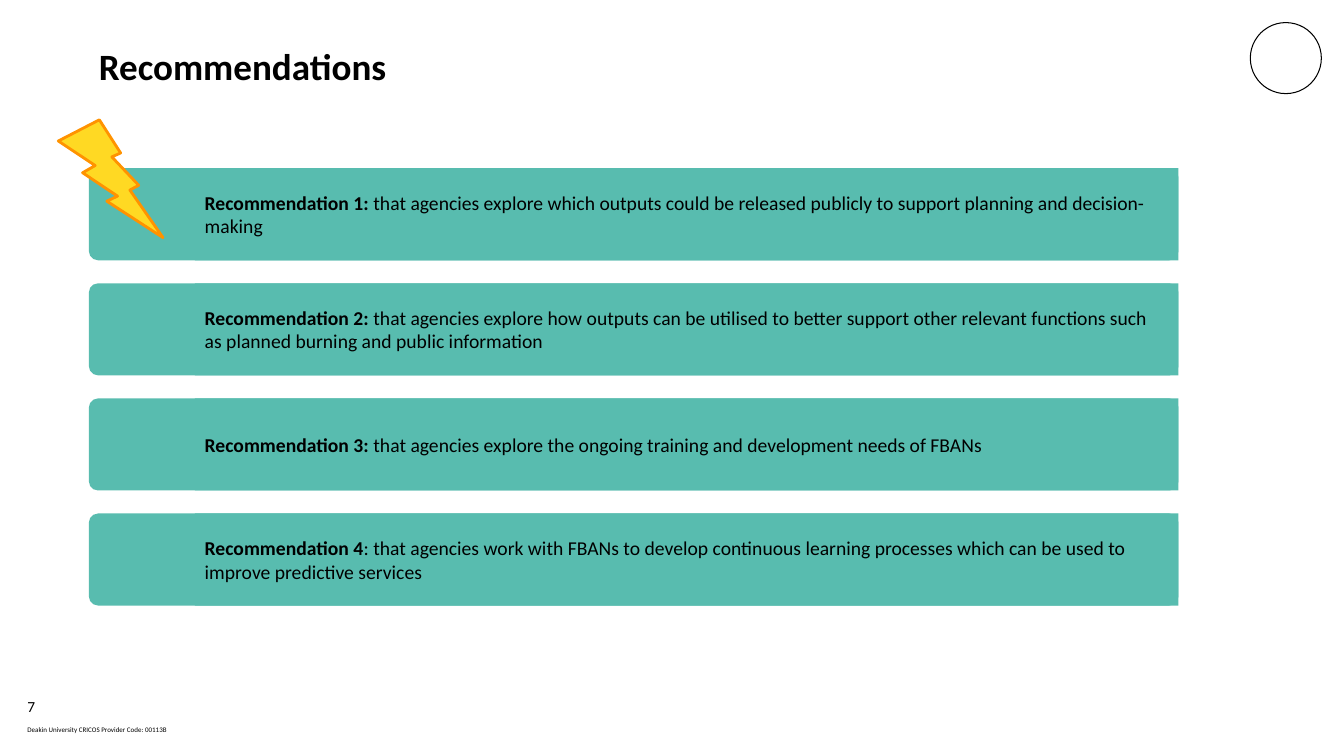
from dataclasses import dataclass

from pptx import Presentation
from pptx import util as u
from pptx.dml import color
from pptx.enum import shapes, text

COLOURS = {
    "text": "000000",
    "bar": "58BCAF",
    "bolt": "FFD923",
    "bolt_edge": "FF9300",
}
FONT = "Calibri"
BAR_LEFT, BAR_TOP, BAR_WIDTH, BAR_HEIGHT = 2.24, 4.24, 27.46, 2.32
BAR_STEP = 2.9
PANEL_INDENT = 2.67


@dataclass
class Box:
    left: float
    top: float
    width: float
    height: float

    def lengths(self) -> list[u.Cm]:
        return [u.Cm(value) for value in (self.left, self.top, self.width, self.height)]


@dataclass
class Label:
    box: Box
    wording: str
    size: float
    bold: bool = False
    anchor: text.MSO_ANCHOR = text.MSO_ANCHOR.TOP
    inset: float = 0
    margin: float = 0.13
    spacing: float = 1.0


@dataclass
class Recommendation:
    heading: str
    detail: str


LABELS = [
    Label(Box(2.24, 0.97, 15.29, 2.59), "Recommendations", 26.5, bold=True, inset=0.25),
    Label(Box(0.69, 17.48, 1.6, 0.69), "7", 11, anchor=text.MSO_ANCHOR.MIDDLE, spacing=0.9),
    Label(Box(0.69, 18.19, 18.39, 0.51), "Deakin University CRICOS Provider Code: 00113B", 5, margin=0.1),
]

RECOMMENDATIONS = [
    Recommendation(
        "Recommendation 1:",
        " that agencies explore which outputs could be released publicly"
        " to support planning and decision-making",
    ),
    Recommendation(
        "Recommendation 2:",
        " that agencies explore how outputs can be utilised to better support"
        " other relevant functions such as planned burning and public information",
    ),
    Recommendation(
        "Recommendation 3:",
        " that agencies explore the ongoing training and development needs of FBANs",
    ),
    Recommendation(
        "Recommendation 4",
        ": that agencies work with FBANs to develop continuous learning processes"
        " which can be used to improve predictive services",
    ),
]


def rgb(name: str) -> color.RGBColor:
    return color.RGBColor.from_string(COLOURS[name])


def format_run(run, size: float, bold: bool) -> None:
    run.font.name = FONT
    run.font.size = u.Pt(size)
    run.font.bold = bold
    run.font.color.rgb = rgb("text")


def set_margins(frame, horizontal: float, vertical: float) -> None:
    frame.margin_left = frame.margin_right = u.Cm(horizontal)
    frame.margin_top = frame.margin_bottom = u.Cm(vertical)


def draw_shape(slide, kind: shapes.MSO_SHAPE, box: Box, fill: str = "", edge: str = "", weight: float = 0):
    shape = slide.shapes.add_shape(kind, *box.lengths())
    shape.shadow.inherit = False
    if fill:
        shape.fill.solid()
        shape.fill.fore_color.rgb = rgb(fill)
    else:
        shape.fill.background()
    if edge:
        shape.line.color.rgb = rgb(edge)
        shape.line.width = u.Pt(weight)
    else:
        shape.line.fill.background()
    return shape


def draw_label(slide, label: Label) -> None:
    frame = slide.shapes.add_textbox(*label.box.lengths()).text_frame
    frame.word_wrap = True
    frame.vertical_anchor = label.anchor
    set_margins(frame, label.inset, label.margin)
    paragraph = frame.paragraphs[0]
    paragraph.text = label.wording
    paragraph.line_spacing = label.spacing
    format_run(paragraph.runs[0], label.size, label.bold)


def draw_recommendation(slide, index: int, recommendation: Recommendation) -> None:
    top = BAR_TOP + index * BAR_STEP
    bar_box = Box(BAR_LEFT, top, BAR_WIDTH, BAR_HEIGHT)
    bar = draw_shape(slide, shapes.MSO_SHAPE.ROUNDED_RECTANGLE, bar_box, "bar")
    bar.adjustments[0] = 0.1
    panel_box = Box(BAR_LEFT + PANEL_INDENT, top, BAR_WIDTH - PANEL_INDENT, BAR_HEIGHT)
    panel = draw_shape(slide, shapes.MSO_SHAPE.RECTANGLE, panel_box, "bar")
    frame = panel.text_frame
    frame.word_wrap = True
    frame.vertical_anchor = text.MSO_ANCHOR.MIDDLE
    set_margins(frame, 0.25, 0.25)
    paragraph = frame.paragraphs[0]
    paragraph.alignment = text.PP_ALIGN.LEFT
    paragraph.text = recommendation.heading
    paragraph.add_run().text = recommendation.detail
    for run, bold in zip(paragraph.runs, (True, False)):
        format_run(run, 14, bold)


def main() -> None:
    presentation = Presentation()
    presentation.slide_width = u.Cm(33.87)
    presentation.slide_height = u.Cm(19.05)
    slide = presentation.slides.add_slide(presentation.slide_layouts[6])
    draw_shape(slide, shapes.MSO_SHAPE.OVAL, Box(31.51, 0.57, 1.79, 1.79), edge="text", weight=0.75)
    for label in LABELS:
        draw_label(slide, label)
    for index, recommendation in enumerate(RECOMMENDATIONS):
        draw_recommendation(slide, index, recommendation)
    bolt_box = Box(1.47, 3.02, 2.64, 2.97)
    draw_shape(slide, shapes.MSO_SHAPE.LIGHTNING_BOLT, bolt_box, "bolt", "bolt_edge", 2)
    presentation.save("out.pptx")


if __name__ == "__main__":
    main()
